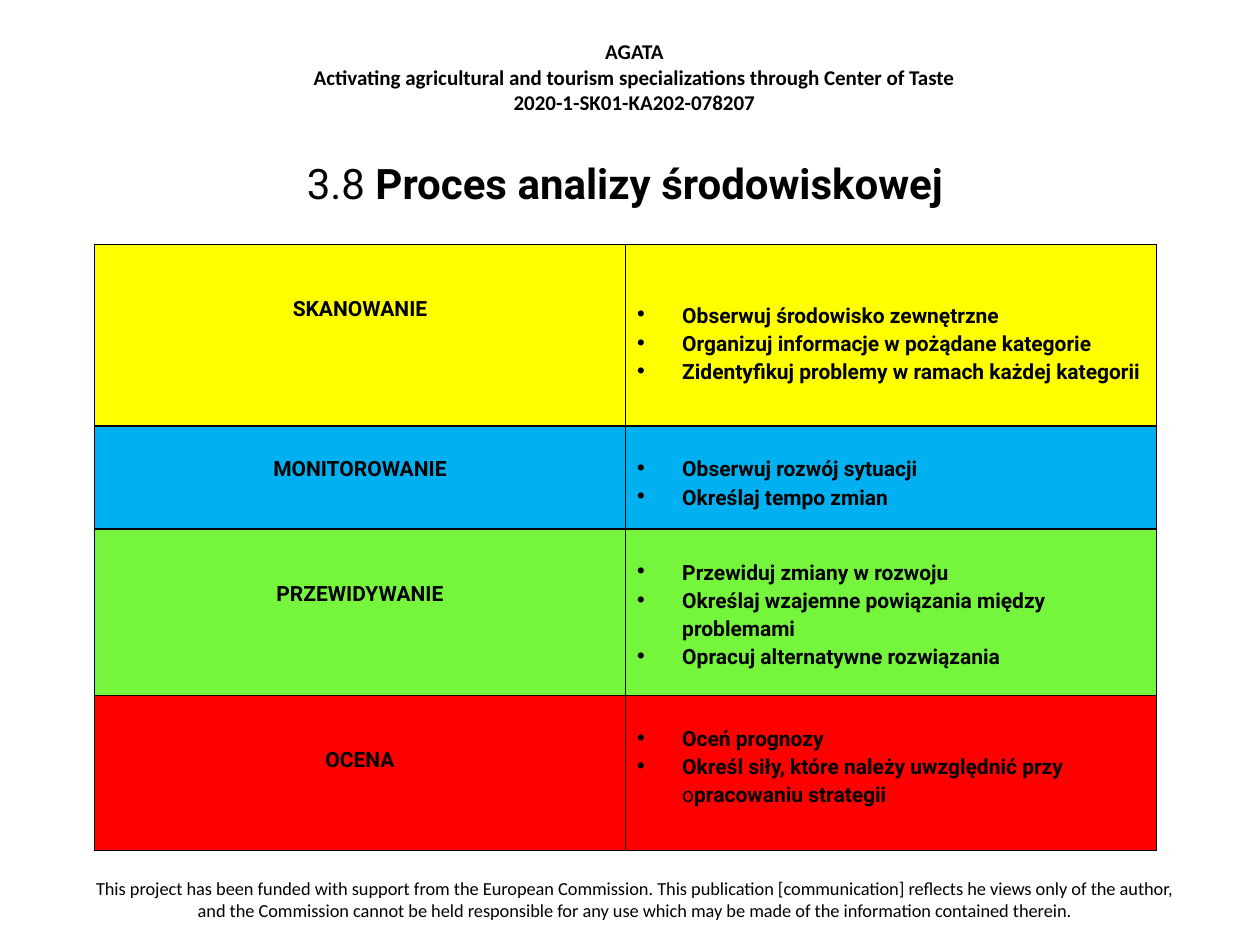
from dataclasses import dataclass

from lxml.etree import SubElement
from pptx import Presentation
from pptx.dml.color import RGBColor
from pptx.enum.text import MSO_ANCHOR, PP_ALIGN
from pptx.oxml.ns import qn
from pptx.util import Inches, Pt


@dataclass(frozen=True)
class Theme:
    ink: str = "000000"
    scanning: str = "FFFF00"
    monitoring: str = "00B0F0"
    forecasting: str = "76F53D"
    assessment: str = "FF0000"
    project_font: str = "Calibri"
    content_font: str = "Roboto"
    title_size: float = 24
    content_size: float = 12
    funding_size: float = 10.5
    border_width: float = 1


THEME = Theme()
SLIDE_WIDTH, SLIDE_HEIGHT = Inches(10), Inches(7.5)
GRID_COLUMNS, GRID_ROWS = 200, 150

PROJECT = [
    "AGATA",
    "Activating agricultural and tourism specializations through Center of Taste",
    "2020-1-SK01-KA202-078207",
]
FUNDING = (
    "This project has been funded with support from the European Commission. "
    "This publication [communication] reflects he views only of the author, "
    "and the Commission cannot be held responsible for any use which may be made "
    "of the information contained therein."
)
TITLE = [("3.8 ", False), ("Proces analizy środowiskowej", True)]
STAGES = [
    ("SKANOWANIE", THEME.scanning, 28.8, 7.8, 8.8, [
        "Obserwuj środowisko zewnętrzne",
        "Organizuj informacje w pożądane kategorie",
        "Zidentyfikuj problemy w ramach każdej kategorii",
    ]),
    ("MONITOROWANIE", THEME.monitoring, 16.4, 4.4, 4.4, [
        "Obserwuj rozwój sytuacji",
        "Określaj tempo zmian",
    ]),
    ("PRZEWIDYWANIE", THEME.forecasting, 26.4, 7.8, 4.4, [
        "Przewiduj zmiany w rozwoju",
        "Określaj wzajemne powiązania między problemami",
        "Opracuj alternatywne rozwiązania",
    ]),
    ("OCENA", THEME.assessment, 24.6, 7.8, 4.4, [
        "Oceń prognozy",
        [("Określ siły, które należy uwzględnić przy ", True), ("o", False),
         ("pracowaniu strategii", True)],
    ]),
]


def across(columns):
    return round(SLIDE_WIDTH * columns / GRID_COLUMNS)


def down(rows):
    return round(SLIDE_HEIGHT * rows / GRID_ROWS)


def area(left, top, width, height):
    return across(left), down(top), across(width), down(height)


def add_bullet(paragraph):
    properties = paragraph._p.get_or_add_pPr()
    properties.set("marL", str(across(7.6)))
    properties.set("indent", str(-across(7.6)))
    bullet_color = SubElement(properties, qn("a:buClr"))
    SubElement(bullet_color, qn("a:srgbClr")).set("val", THEME.ink)
    SubElement(properties, qn("a:buChar")).set("char", "∙")


def write(frame, paragraphs, font=THEME.content_font, size=THEME.content_size,
          bold=True, align=PP_ALIGN.CENTER, spacing=None, bulleted=False):
    frame.word_wrap = True
    for index, content in enumerate(paragraphs):
        paragraph = frame.add_paragraph() if index else frame.paragraphs[0]
        paragraph.alignment = align
        if spacing:
            paragraph.line_spacing = spacing
        if bulleted:
            add_bullet(paragraph)
        pieces = [(content, bold)] if isinstance(content, str) else content
        for words, strong in pieces:
            run = paragraph.add_run()
            run.text = words
            run.font.name = font
            run.font.size = Pt(size)
            run.font.bold = strong
            run.font.color.rgb = RGBColor.from_string(THEME.ink)


def add_note(slide, place, paragraphs, **text_format):
    note = slide.shapes.add_textbox(*area(*place))
    write(note.text_frame, paragraphs, font=THEME.project_font, **text_format)


def place_title(slide):
    title = slide.shapes.title
    title.left, title.top, title.width, title.height = area(9.2, 19.2, 180, 19.6)
    title.text_frame.vertical_anchor = MSO_ANCHOR.MIDDLE
    write(title.text_frame, [TITLE], size=THEME.title_size)


def add_borders(cell):
    properties = cell._tc.get_or_add_tcPr()
    for position, side in enumerate(("a:lnL", "a:lnR", "a:lnT", "a:lnB")):
        border = properties.makeelement(qn(side), {"w": str(Pt(THEME.border_width))})
        fill = SubElement(border, qn("a:solidFill"))
        SubElement(fill, qn("a:srgbClr")).set("val", THEME.ink)
        properties.insert(position, border)


def fill_cell(cell, color, top_margin, paragraphs, **text_format):
    cell.margin_left = cell.margin_right = across(1.4)
    cell.margin_top, cell.margin_bottom = down(top_margin), 0
    cell.fill.solid()
    cell.fill.fore_color.rgb = RGBColor.from_string(color)
    add_borders(cell)
    write(cell.text_frame, paragraphs, spacing=1.15, **text_format)


def add_stage_table(slide):
    total_height = sum(stage[2] for stage in STAGES)
    place = area(15, 38.8, 168.6, total_height)
    table = slide.shapes.add_table(len(STAGES), 2, *place).table
    table.first_row = table.horz_banding = False
    for row, stage in enumerate(STAGES):
        name, color, height, name_margin, tasks_margin, tasks = stage
        table.rows[row].height = down(height)
        fill_cell(table.cell(row, 0), color, name_margin, [name])
        fill_cell(table.cell(row, 1), color, tasks_margin, tasks,
                  align=PP_ALIGN.LEFT, bulleted=True)


def main():
    presentation = Presentation()
    presentation.slide_width, presentation.slide_height = SLIDE_WIDTH, SLIDE_HEIGHT
    slide = presentation.slides.add_slide(presentation.slide_layouts[5])
    add_note(slide, (41.6, 5.2, 118.2, 14.2), PROJECT)
    add_note(slide, (10.8, 138.2, 180, 9.4), [FUNDING],
             size=THEME.funding_size, bold=False)
    place_title(slide)
    add_stage_table(slide)
    presentation.save("out.pptx")


if __name__ == "__main__":
    main()
